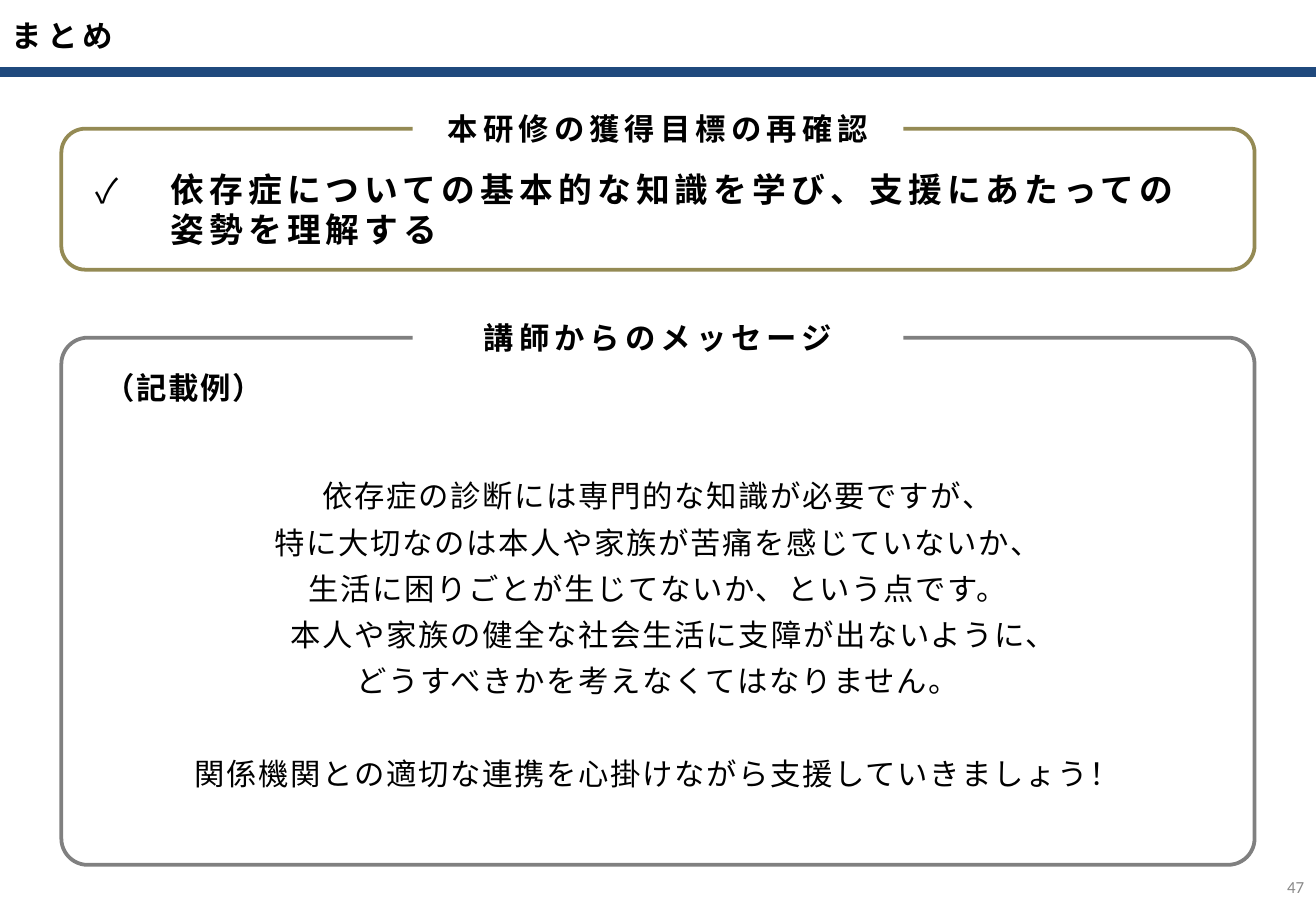
from lxml.etree import SubElement as Sub
from pptx import Presentation
from pptx.dml.color import RGBColor as RGB
from pptx.enum.shapes import MSO_CONNECTOR as CONN, MSO_SHAPE as SHAPE
from pptx.enum.text import MSO_ANCHOR as ANCHOR, PP_ALIGN as ALIGN
from pptx.oxml.ns import qn
from pptx.util import Inches, Pt

WIDE, HIGH = Inches(10.83), Inches(7.5)
COL, ROW = WIDE / 100, HIGH / 100
HUES = {"navy": "1F497D", "olive": "948A54", "gray": "808080",
        "pale": "898989", "black": "000000", "white": "FFFFFF"}
SANS = "Noto Sans CJK JP"
HEAD = {"size": Pt(18), "bold": True, "name": SANS}
GOAL = {**HEAD, "size": Pt(20)}
BODY = {**HEAD, "bold": False}
PAGE = {"size": Pt(10), "bold": False, "name": "Calibri"}
MID = {"alignment": ALIGN.CENTER}
LINES = [
    "依存症の診断には専門的な知識が必要ですが、",
    "特に大切なのは本人や家族が苦痛を感じていないか、",
    "生活に困りごとが生じてないか、という点です。",
    "本人や家族の健全な社会生活に支障が出ないように、",
    "どうすべきかを考えなくてはなりません。",
    "関係機関との適切な連携を心掛けながら支援していきましょう！",
]


def hue(name):
    return RGB.from_string(HUES[name])


def area(x, y, w, h):
    """Turn grid columns and rows into lengths; x of None centres."""
    x = (100 - w) / 2 if x is None else x
    return [round(n) for n in (x * COL, y * ROW, w * COL, h * ROW)]


def apply(item, form):
    for key, val in form.items():
        setattr(item, key, val)


def style(para, font, form, track=0, color="black"):
    apply(para, {"line_spacing": Pt(font["size"].pt * 1.19), **form})
    for run in para.runs:
        apply(run.font, font)
        run.font.color.rgb = hue(color)
        props = run._r.get_or_add_rPr()
        props.set("spc", str(track * 100))
        if font["name"] == SANS:
            east = Sub(props, qn("a:ea"))
            east.set("typeface", SANS)


def indent(para, left, first=0):
    props = para._p.get_or_add_pPr()
    props.set("marL", str(Inches(left)))
    props.set("indent", str(Inches(first)))
    return props


def tick(para):
    props = indent(para, 0.62, -0.62)
    Sub(props, qn("a:buFont")).set("typeface", SANS)
    Sub(props, qn("a:buChar")).set("char", "✓")


def label(slide, box, lines, font, form, track=0, color="black",
          anchor=ANCHOR.MIDDLE):
    """Add a text box and return its paragraphs."""
    frame = slide.shapes.add_textbox(*area(*box)).text_frame
    apply(frame, {"word_wrap": True, "vertical_anchor": anchor})
    frame.text = "\n".join(lines)
    for para in frame.paragraphs:
        style(para, font, form, track, color)
    return frame.paragraphs


def panel(slide, top, high, curve, color, head):
    """Add a rounded outline with a heading set into its top edge."""
    edge = slide.shapes.add_shape(SHAPE.ROUNDED_RECTANGLE,
                                  *area(None, top, 90.67, high))
    edge.adjustments[0] = curve
    edge.shadow.inherit = False
    edge.fill.background()
    edge.line.color.rgb = hue(color)
    edge.line.width = Pt(2.25)

    deep = 5.33
    plate = slide.shapes.add_shape(SHAPE.RECTANGLE,
                                   *area(None, top - deep / 2, 37.3, deep))
    plate.shadow.inherit = False
    plate.fill.solid()
    plate.fill.fore_color.rgb = hue("white")
    plate.line.fill.background()
    frame = plate.text_frame
    apply(frame, {"text": head, "vertical_anchor": ANCHOR.TOP})
    style(frame.paragraphs[0], HEAD, MID, 3)


def rule(slide, row):
    y = round(row * ROW)
    line = slide.shapes.add_connector(CONN.STRAIGHT, 0, y, WIDE, y)
    line.line.color.rgb = hue("navy")
    line.line.width = Pt(6)
    Sub(line._element.spPr, qn("a:effectLst"))


def main():
    deck = Presentation()
    apply(deck, {"slide_width": WIDE, "slide_height": HIGH})
    slide = deck.slides.add_slide(deck.slide_layouts[6])

    rule(slide, 7.87)
    label(slide, (0, 0, 100, 7.87), ["まとめ"], HEAD, {}, 3)
    label(slide, (96.2, 94.67, 3.8, 5.33), ["47"], PAGE,
          {"alignment": ALIGN.RIGHT}, color="pale")

    panel(slide, 14.13, 15.47, 0.17, "olive", "本研修の獲得目標の再確認")
    goal = "依存症についての基本的な知識を学び、支援にあたっての\v姿勢を理解する"
    tick(label(slide, (None, 18.8, 87.35, 8.4), [goal], GOAL, {}, 3)[0])

    panel(slide, 37.07, 57.87, 0.05, "gray", "講師からのメッセージ")
    label(slide, (6.65, 39.87, 14.59, 5.33), ["（記載例）"], HEAD, MID, 1,
          anchor=ANCHOR.TOP)
    words = label(slide, (None, 43.6, 87.72, 52.13), LINES, BODY,
                  {**MID, "space_before": Pt(6)}, 1)
    indent(words[3], 0.26)
    words[-1].space_before = Pt(33.5)

    deck.save("out.pptx")


if __name__ == "__main__":
    main()
